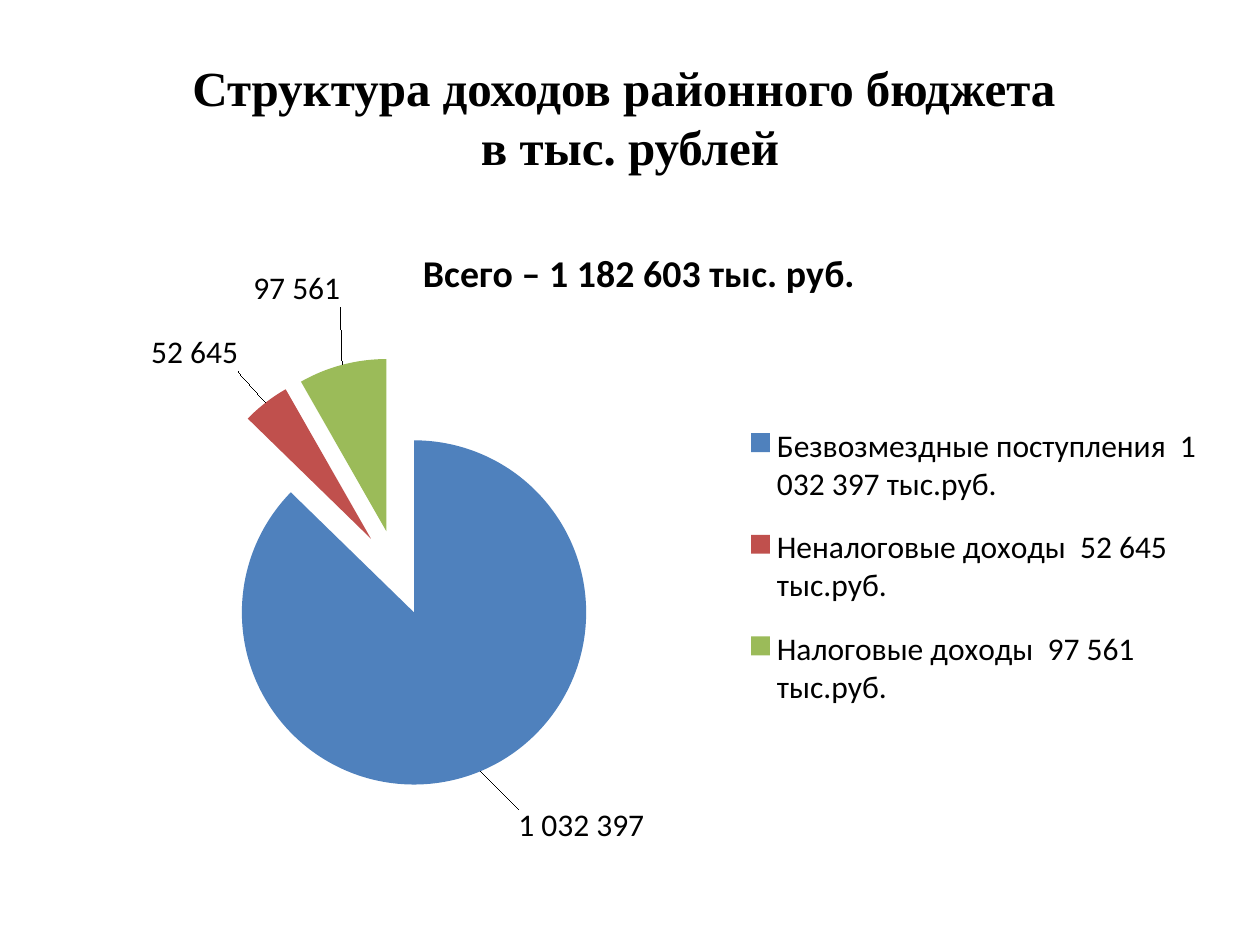
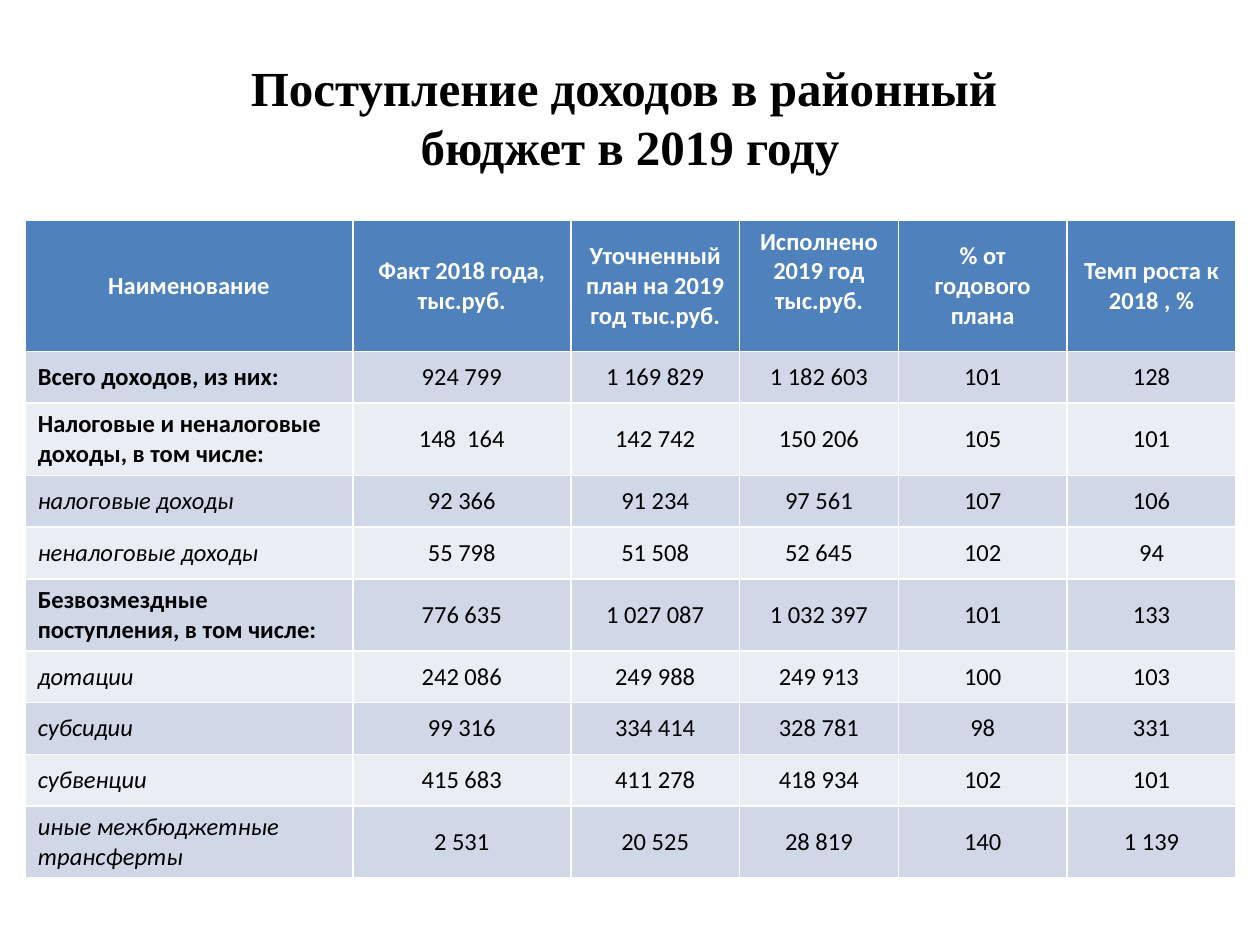
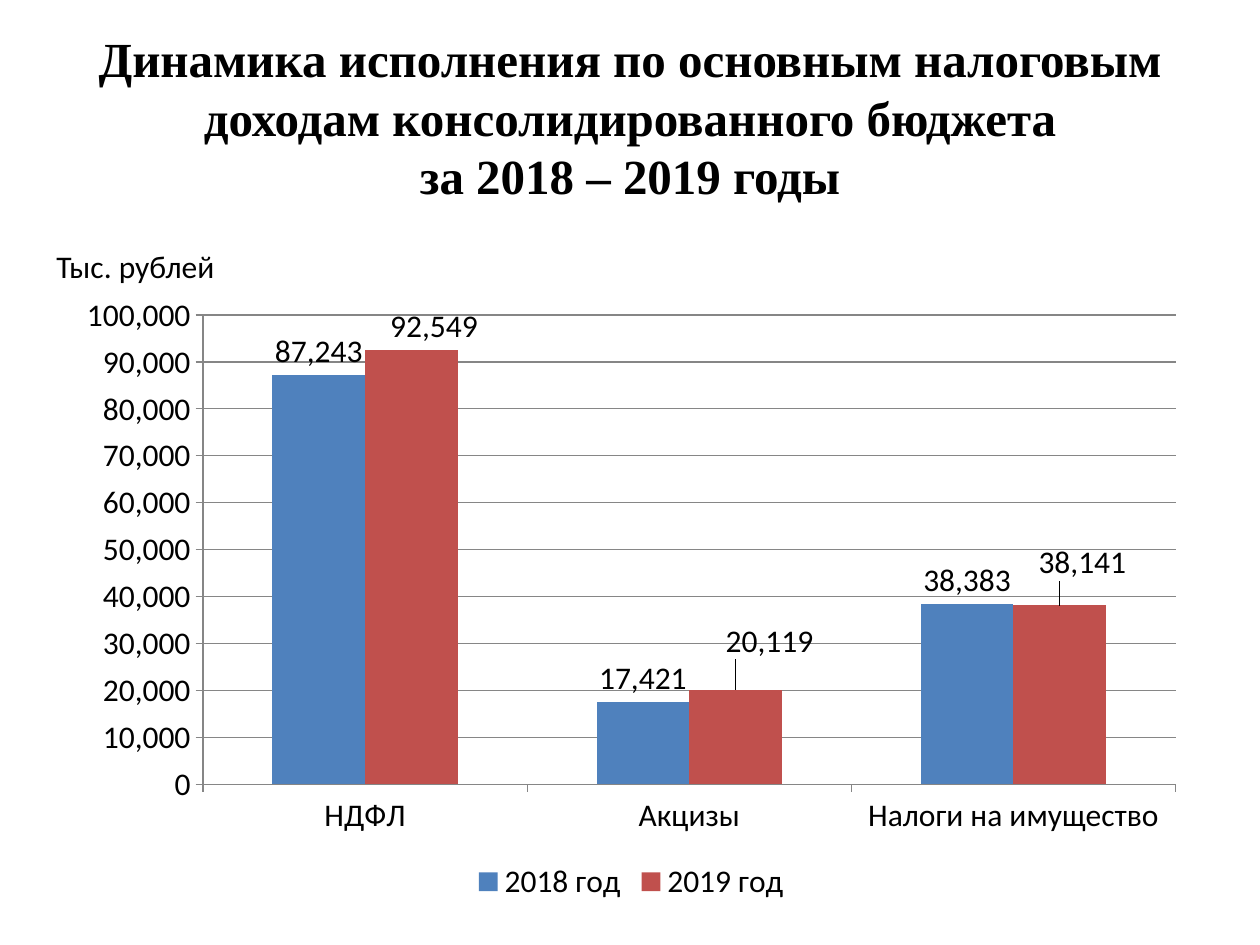
from pptx import Presentation
from pptx.chart.data import CategoryChartData
from pptx.dml.color import RGBColor
from pptx.enum.chart import XL_CHART_TYPE, XL_LABEL_POSITION, XL_LEGEND_POSITION, XL_TICK_MARK
from pptx.enum.text import MSO_ANCHOR, MSO_AUTO_SIZE, PP_ALIGN
from pptx.oxml import parse_xml
from pptx.oxml.ns import nsdecls
from pptx.util import Inches, Pt

PIE, COLUMN = XL_CHART_TYPE.PIE, XL_CHART_TYPE.COLUMN_CLUSTERED
OUTSIDE_END = XL_LABEL_POSITION.OUTSIDE_END
RIGHT, BOTTOM = XL_LEGEND_POSITION.RIGHT, XL_LEGEND_POSITION.BOTTOM
TICK_OUT = XL_TICK_MARK.OUTSIDE
CENTER, LEFT = PP_ALIGN.CENTER, PP_ALIGN.LEFT
MIDDLE = MSO_ANCHOR.MIDDLE
NO_FIT = MSO_AUTO_SIZE.NONE

BLACK = RGBColor(0x00, 0x00, 0x00)
WHITE = RGBColor(0xFF, 0xFF, 0xFF)
GRAY = RGBColor(0x86, 0x86, 0x86)
BLUE = RGBColor(0x4F, 0x81, 0xBD)
RED = RGBColor(0xC0, 0x50, 0x4D)
GREEN = RGBColor(0x9B, 0xBB, 0x59)
BAND_DARK = RGBColor(0xD0, 0xD8, 0xE8)
BAND_LIGHT = RGBColor(0xE9, 0xED, 0xF4)
TITLE_FONT, BODY_FONT = "Times New Roman", "Calibri"


def set_font(font, size, color=BLACK, bold=False, italic=False, name=BODY_FONT):
    font.name = name
    font.size = Pt(size)
    font.bold = bold
    font.italic = italic
    font.color.rgb = color


def manual_layout(x, y, w=None, h=None, inner=False):
    tags = '<c:layoutTarget val="inner"/>' if inner else ""
    if w is not None:
        tags += '<c:xMode val="edge"/><c:yMode val="edge"/>'
    for tag, value in zip("xywh", (x, y, w, h)):
        if value is not None:
            tags += f'<c:{tag} val="{value}"/>'
    return parse_xml(f'<c:layout {nsdecls("c")}><c:manualLayout>{tags}</c:manualLayout></c:layout>')


prs = Presentation()
prs.slide_width, prs.slide_height = Inches(10), Inches(7.5)

titles = [
    "Структура доходов районного бюджета \vв тыс. рублей",
    "Поступление доходов в районный \vбюджет в 2019 году",
    "Динамика исполнения по основным налоговым доходам консолидированного бюджета\vза 2018 – 2019 годы",
]
slides = []
for text in titles:
    s = prs.slides.add_slide(prs.slide_layouts[5])
    title = s.shapes.title
    title.left, title.top = Inches(0.5), Inches(0.3)
    title.width, title.height = Inches(9), Inches(1.25)
    tf = title.text_frame
    tf.text = text
    tf.auto_size = NO_FIT
    tf.vertical_anchor = MIDDLE
    p = tf.paragraphs[0]
    p.alignment = CENTER
    set_font(p.font, 28, bold=True, name=TITLE_FONT)
    slides.append(s)
income_slide, table_slide, taxes_slide = slides

data = CategoryChartData(number_format="#,##0")
data.categories = [
    "Безвозмездные поступления  1 032 397 тыс.руб.",
    "Неналоговые доходы  52 645 тыс.руб.",
    "Налоговые доходы  97 561 тыс.руб.",
]
data.add_series("Series 1", (1032397, 52645, 97561))
chart = income_slide.shapes.add_chart(
    PIE, Inches(0.5), Inches(1.75), Inches(9.15), Inches(4.95), data).chart
set_font(chart.font, 18)
chart.has_title = True
chart.chart_title.include_in_layout = False
p = chart.chart_title.text_frame.paragraphs[0]
p.text = "Всего – 1 182 603 тыс. руб."
set_font(p.font, 21.6, bold=True)
chart.has_legend = True
chart.legend.position = RIGHT
chart.legend.include_in_layout = False
chart.legend._element.insert(1, manual_layout(0.59, 0.29, 0.4, 0.53))
plot = chart.plots[0]
plot.vary_by_categories = True
plot_area = chart._chartSpace.chart.plotArea
for old in plot_area.findall("{*}layout"):
    plot_area.remove(old)
plot_area.insert(0, manual_layout(0.1, 0.22, 0.38, 0.69, inner=True))
series = plot.series[0]
labels = series.data_labels
labels.show_value = True
labels.number_format = "#,##0"
labels.number_format_is_linked = False
labels.position = OUTSIDE_END
slices = [
    (BLUE, "1 032 397", 0.03, 0.05),
    (RED, "52 645", -0.02, -0.04),
    (GREEN, "97 561", 0, -0.08),
]
for i, (color, text, dx, dy) in enumerate(slices):
    point = series.points[i]
    point.format.fill.solid()
    point.format.fill.fore_color.rgb = color
    label = point.data_label
    p = label.text_frame.paragraphs[0]
    p.text = text
    set_font(p.font, 18)
    label.position = OUTSIDE_END
    label._get_or_add_dLbl().insert(1, manual_layout(dx, dy))
series._element.find("{*}dPt").addprevious(
    parse_xml(f'<c:explosion {nsdecls("c")} val="25"/>'))

rows = [
    ("Наименование", "Факт 2018 года, тыс.руб.", "Уточненный план на 2019 год тыс.руб.",
     "Исполнено 2019 год тыс.руб.", "% от годового плана", "Темп роста к 2018 , %"),
    ("Всего доходов, из них:", "924 799", "1 169 829", "1 182 603", "101", "128"),
    ("Налоговые и неналоговые доходы, в том числе:", "148  164", "142 742", "150 206", "105", "101"),
    ("налоговые доходы", "92 366", "91 234", "97 561", "107", "106"),
    ("неналоговые доходы", "55 798", "51 508", "52 645", "102", "94"),
    ("Безвозмездные поступления, в том числе:", "776 635", "1 027 087", "1 032 397", "101", "133"),
    ("дотации", "242 086", "249 988", "249 913", "100", "103"),
    ("субсидии", "99 316", "334 414", "328 781", "98", "331"),
    ("субвенции", "415 683", "411 278", "418 934", "102", "101"),
    ("иные межбюджетные трансферты", "2 531", "20 525", "28 819", "140", "1 139"),
]
group_rows = (1, 2, 5)
two_line_rows = (2, 5, 9)
table = table_slide.shapes.add_table(
    len(rows), 6, Inches(0.2), Inches(1.75), Inches(9.61), Inches(5.17)).table
for column, width in zip(table.columns, (2.6, 1.73, 1.34, 1.26, 1.34, 1.34)):
    column.width = Inches(width)
for i, row in enumerate(rows):
    header = i == 0
    table.rows[i].height = Inches(1.03 if header else 0.57 if i in two_line_rows else 0.41)
    fill = BLUE if header else BAND_DARK if i % 2 else BAND_LIGHT
    for j, text in enumerate(row):
        cell = table.cell(i, j)
        cell.text = text
        cell.vertical_anchor = MIDDLE
        cell.fill.solid()
        cell.fill.fore_color.rgb = fill
        name_cell = j == 0 and not header
        p = cell.text_frame.paragraphs[0]
        p.alignment = LEFT if name_cell else CENTER
        set_font(p.font, 14, WHITE if header else BLACK,
                 bold=header or (name_cell and i in group_rows),
                 italic=name_cell and i not in group_rows)
table.cell(0, 3).margin_bottom = Inches(0.28)

data = CategoryChartData(number_format="#,##0")
data.categories = ["НДФЛ", "Акцизы", "Налоги на имущество"]
data.add_series("2018 год", (87243, 17421, 38383))
data.add_series("2019 год", (92549, 20119, 38141))
chart = taxes_slide.shapes.add_chart(
    COLUMN, Inches(0.51), Inches(2.25), Inches(9), Inches(4.95), data).chart
set_font(chart.font, 18)
chart.has_title = False
chart.has_legend = True
chart.legend.position = BOTTOM
chart.legend.include_in_layout = False
for axis in (chart.category_axis, chart.value_axis):
    axis.major_tick_mark = TICK_OUT
    axis.format.line.color.rgb = GRAY
chart.value_axis.has_major_gridlines = True
chart.value_axis.major_gridlines.format.line.color.rgb = GRAY
chart.value_axis.tick_labels.number_format = "#,##0"
chart.value_axis.tick_labels.number_format_is_linked = False
plot = chart.plots[0]
plot.gap_width = 150
plot.vary_by_categories = False
for series, color in zip(plot.series, (BLUE, RED)):
    series.format.fill.solid()
    series.format.fill.fore_color.rgb = color
    labels = series.data_labels
    labels.show_value = True
    labels.number_format = "#,##0"
    labels.number_format_is_linked = False
    labels.position = OUTSIDE_END
for i, (dx, dy) in enumerate([(0.02, 0), (0.03, -0.04), (0.02, -0.03)]):
    label = plot.series[1].points[i].data_label
    label.position = OUTSIDE_END
    label._get_or_add_dLbl().insert(1, manual_layout(dx, dy))

unit_box = taxes_slide.shapes.add_textbox(Inches(0.35), Inches(1.91), Inches(1.47), Inches(0.4))
p = unit_box.text_frame.paragraphs[0]
p.text = "Тыс. рублей"
set_font(p.font, 18)

prs.save("out.pptx")
